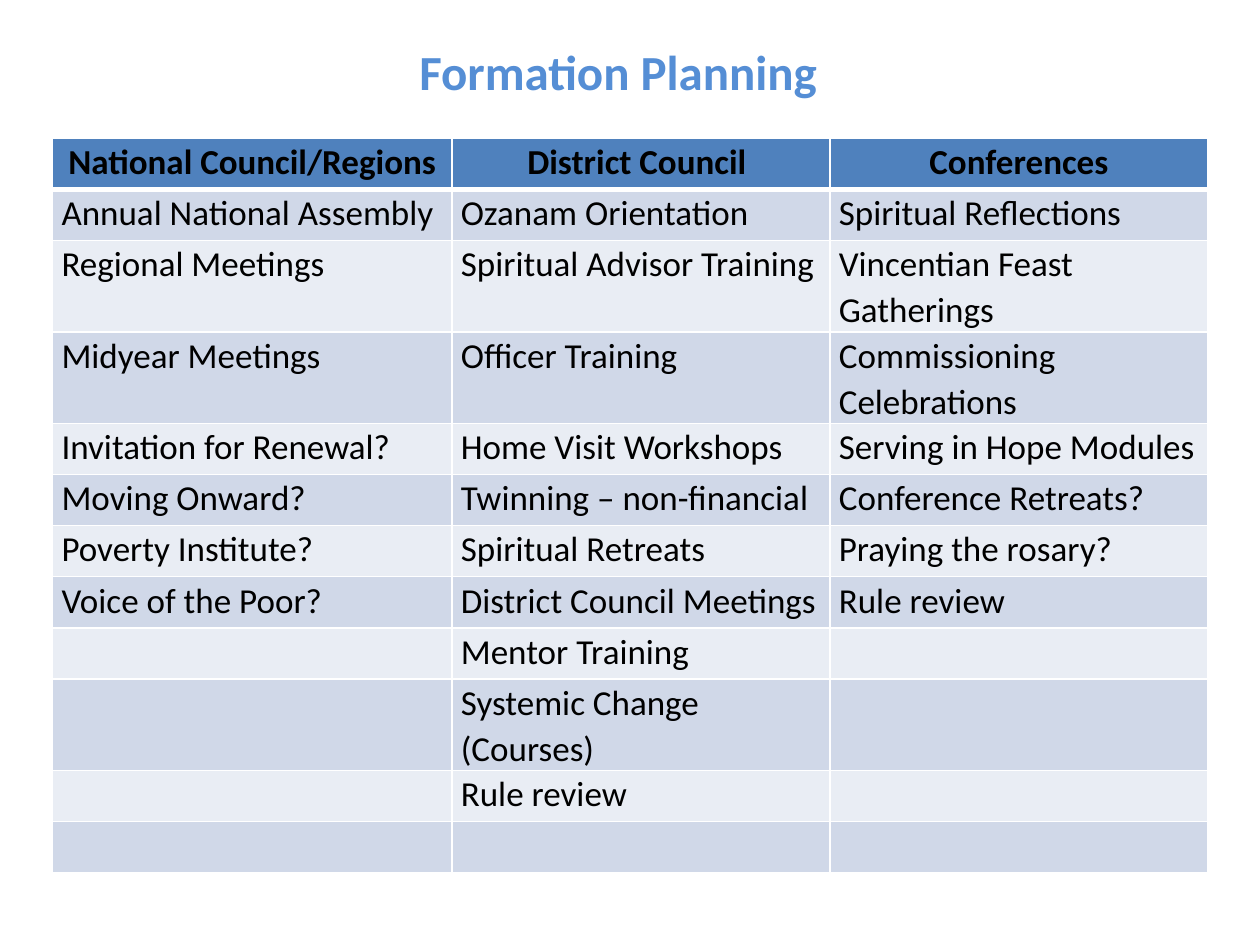
from lxml import etree
from pptx import Presentation
from pptx import util as u
from pptx.dml import color
from pptx.enum import text
from pptx.oxml import ns

COLORS = {
    "title": "558ED5",
    "header": "4F81BD",
    "odd": "D0D8E8",
    "even": "E9EDF4",
    "border": "FFFFFF",
    "text": "000000",
}
FONT = "Calibri"
COLUMN_WIDTHS = [8.05, 7.62, 7.62]
ROW_HEIGHT = 1.03
ROWS = [
    ("National Council/Regions", "District Council ", "Conferences"),
    ("Annual National Assembly", "Ozanam Orientation", "Spiritual Reflections"),
    ("Regional Meetings", "Spiritual Advisor Training", "Vincentian Feast Gatherings"),
    ("Midyear Meetings", "Officer Training", "Commissioning\nCelebrations"),
    ("Invitation for Renewal?", "Home Visit Workshops", "Serving in Hope Modules"),
    ("Moving Onward?", "Twinning – non-financial", "Conference Retreats?"),
    ("Poverty Institute?", "Spiritual Retreats", "Praying the rosary?"),
    ("Voice of the Poor?", "District Council Meetings", "Rule review"),
    ("", "Mentor Training", ""),
    ("", "Systemic Change (Courses)", ""),
    ("", "Rule review", ""),
    ("", "", ""),
]


def rgb(name):
    """Return the named colour."""
    return color.RGBColor.from_string(COLORS[name])


def format_font(font, size, tone, bold):
    """Apply typeface, size, colour and weight."""
    font.name = FONT
    font.size = u.Pt(size)
    font.bold = bold
    font.color.rgb = rgb(tone)


def add_title(page, wording):
    """Add the centred slide title."""
    box = page.shapes.add_textbox(u.Cm(2.34), u.Cm(0.84), u.Cm(21.59), u.Cm(1.96))
    frame = box.text_frame
    frame.word_wrap = True
    frame.margin_left = frame.margin_top = frame.margin_bottom = 0
    frame.margin_right = u.Cm(1.35)
    frame.vertical_anchor = text.MSO_ANCHOR.TOP
    frame.text = wording
    para = frame.paragraphs[0]
    para.alignment = text.PP_ALIGN.CENTER
    format_font(para.runs[0].font, 28, "title", True)


def add_border(cell, side, width):
    """Draw one solid edge of a cell."""
    properties = cell._tc.get_or_add_tcPr()
    line = etree.SubElement(properties, ns.qn(f"a:ln{side}"), w=str(u.Pt(width)))
    fill = etree.SubElement(line, ns.qn("a:solidFill"))
    etree.SubElement(fill, ns.qn("a:srgbClr"), val=COLORS["border"])


def fill_cell(cell, wording, row):
    """Write and style one cell according to its row."""
    is_header = row == 0
    cell.margin_left = cell.margin_right = u.Cm(0.18)
    cell.margin_top, cell.margin_bottom = 0, u.Cm(0.03)
    top, bottom = (3 if row == 1 else 1), (3 if is_header else 1)
    for side, width in zip("LRTB", (1, 1, top, bottom)):
        add_border(cell, side, width)
    cell.fill.solid()
    cell.fill.fore_color.rgb = rgb("header" if is_header else "odd" if row % 2 else "even")
    cell.text_frame.text = wording
    for para in cell.text_frame.paragraphs:
        para.line_spacing = 1.07
        para.alignment = text.PP_ALIGN.CENTER if is_header else text.PP_ALIGN.LEFT
        format_font(para.font, 20, "text", is_header)
        for span in para.runs:
            format_font(span.font, 20, "text", is_header)


def add_plan_table(page):
    """Add the formation plan with one column per level."""
    frame = page.shapes.add_table(
        len(ROWS), len(COLUMN_WIDTHS), u.Cm(1.06), u.Cm(2.79),
        u.Cm(sum(COLUMN_WIDTHS)), u.Cm(ROW_HEIGHT * len(ROWS)))
    table = frame.table
    table.first_row = table.horz_banding = False
    for column, width in zip(table.columns, COLUMN_WIDTHS):
        column.width = u.Cm(width)
    for row, wordings in enumerate(ROWS):
        table.rows[row].height = u.Cm(ROW_HEIGHT)
        for column, wording in enumerate(wordings):
            fill_cell(table.cell(row, column), wording, row)


def main():
    """Build and save the deck."""
    deck = Presentation()
    deck.slide_width, deck.slide_height = u.Cm(25.4), u.Cm(19.05)
    page = deck.slides.add_slide(deck.slide_layouts[6])
    add_title(page, "Formation Planning")
    add_plan_table(page)
    deck.save("out.pptx")


if __name__ == "__main__":
    main()
